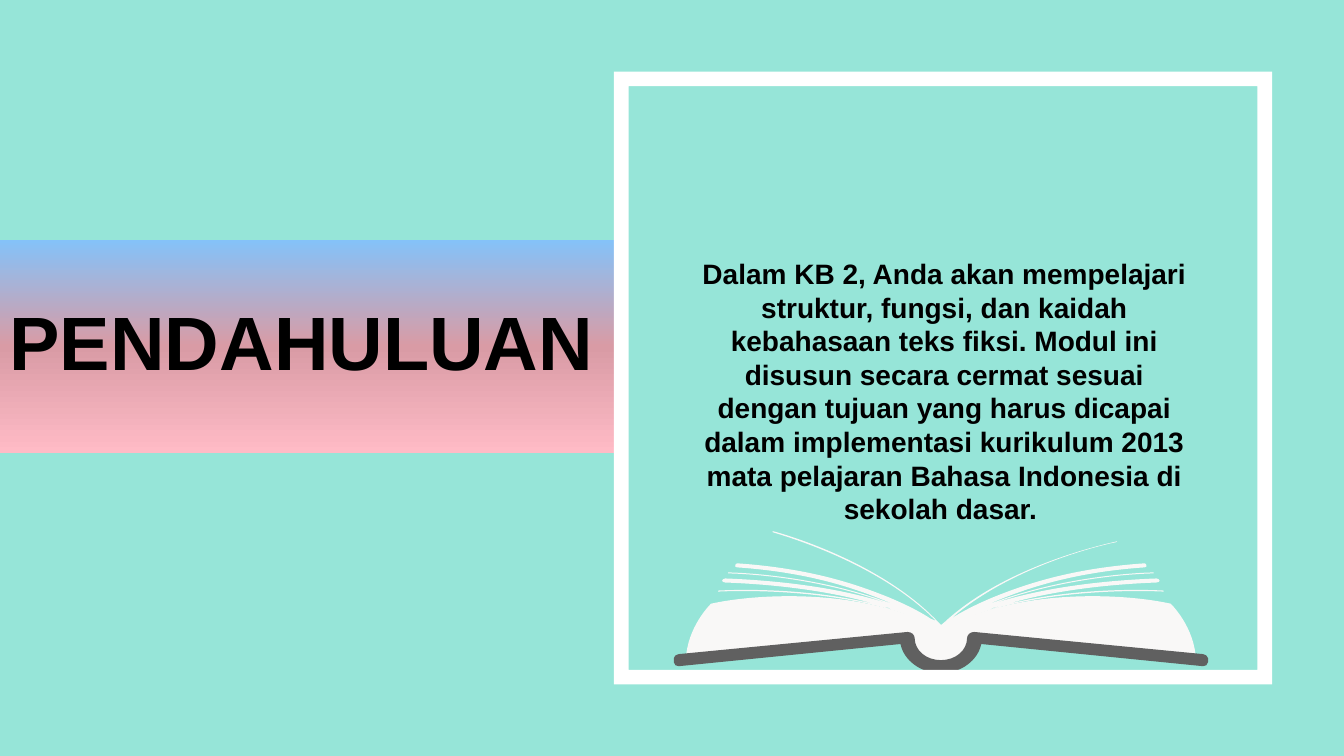
import copy
import itertools
import pptx
import pptx.util
import pptx.dml.color
import pptx.enum.shapes
import pptx.enum.text
import pptx.oxml.ns

Pt = pptx.util.Pt
RGB = pptx.dml.color.RGBColor
MINT = RGB(0x96, 0xE5, 0xD8)
BLUE = RGB(0x85, 0xC2, 0xF8)
ROSE = RGB(0xD9, 0x9B, 0xA5)
PINK = RGB(0xFF, 0xBB, 0xC6)
PAPER = RGB(0xF9, 0xF8, 0xF7)
GREY = RGB(0x60, 0x60, 0x60)
WHITE = RGB(0xFF, 0xFF, 0xFF)
BLACK = RGB(0, 0, 0)

BODY = ("Dalam KB 2, Anda akan mempelajari struktur, fungsi, dan kaidah "
        "kebahasaan teks fiksi. Modul ini disusun secara cermat sesuai dengan "
        "tujuan yang harus dicapai dalam implementasi kurikulum 2013 mata "
        "pelajaran Bahasa Indonesia di sekolah dasar. ")

UNITS = 530
PAGE = [(0, 97), (41.5, 75.5, 88.5, 67, 130, 65),
        (172, 63, 208, 67.5, 228, 72), (228, 72, 252, 95, 253, 128),
        (33, 104), (33, 120, 18, 133, 0, 133)]
COVER = [(0, 141), (20, 141, 37, 128, 40, 112), (260, 134),
         (262, 134, 265, 133, 265, 130), (265, 126),
         (265, 124, 262, 122, 260, 122), (33, 100),
         (29, 100, 26, 103, 26, 106), (26, 118, 15, 128, 0, 128)]
LEAVES = [(221, 59), (220, 59, 129, 53, 49, 77), (51, 77),
          (83, 66, 136, 54, 214, 51), (216, 51, 217, 50, 217, 49),
          (217, 48, 215, 47, 214, 47), (135, 50, 81, 62, 49, 73), (39, 77),
          (121, 43, 210, 42, 211, 42), (211, 41),
          (210, 41, 124, 42, 44, 74), (53, 70),
          (85, 57, 130, 41, 202, 36), (204, 36, 204, 35, 204, 34),
          (204, 33, 203, 32, 202, 32), (129, 37, 83, 53, 51, 66),
          (32, 74, 19, 81, 10, 87)]
SPINE = [(-2, 95), (-2, 97), (1, 100), (1, 100, 12, 92, 37, 82),
         (119, 54, 220, 60, 221, 60)]
RIGHT = [(74, 31, 173, 11, 174, 11), (175, 10), (173, 11, 68, 31, 4, 90)]
LEFT = [(5, 89), (65, 28, 166, 2, 167, 1), (167, 0),
        (166, 0, 60, 28, 1, 92)]


def pairs(part):
    return list(zip(part[::2], part[1::2]))


def flip(path):
    return [tuple(n for x, y in pairs(part) for n in (-x, y))
            for part in path]


def back(path):
    steps = list(itertools.pairwise(path))[::-1]
    return [part[2:4] + part[:2] + last[-2:] if len(part) == 6 else last[-2:]
            for last, part in steps]


def paint(shape, color):
    shape.shadow.inherit = False
    shape.fill.solid()
    shape.fill.fore_color.rgb = color
    shape.line.fill.background()


def bend(shape, spots):
    lines = shape._element.xpath(".//a:lnTo")
    for part, line in zip(spots[1:], lines):
        if len(part) == 1:
            continue
        line.tag = pptx.oxml.ns.qn("a:cubicBezTo")
        for place, (x, y) in enumerate(part[:2]):
            dot = copy.deepcopy(line[-1])
            dot.set("x", str(x - shape.left))
            dot.set("y", str(y - shape.top))
            line.insert(place, dot)


def style(para, size):
    font = para.runs[0].font
    font.name = "Arial"
    font.size = Pt(size)
    font.bold = True
    font.color.rgb = BLACK


def banner(slide, box):
    title = slide.shapes.title
    title.left, title.top, title.width, title.height = map(Pt, box)
    title.fill.gradient()
    title.fill.gradient_angle = 270
    first = title._element.xpath(".//a:gs")[0]
    first.addnext(copy.deepcopy(first))
    stops = title.fill.gradient_stops
    for stop, spot, color in zip(stops, (0, 0.5, 1), (BLUE, ROSE, PINK)):
        stop.position = spot
        stop.color.rgb = color
    frame = title.text_frame
    frame.text = "PENDAHULUAN"
    frame.auto_size = pptx.enum.text.MSO_AUTO_SIZE.NONE
    frame.vertical_anchor = pptx.enum.text.MSO_ANCHOR.MIDDLE
    para = frame.paragraphs[0]
    para.alignment = pptx.enum.text.PP_ALIGN.LEFT
    para.line_spacing = 0.9
    style(para, 54)


def book(slide, box):
    left, top, width = box
    unit = width / UNITS
    group = slide.shapes.add_group_shape()

    def draw(path, color):
        spots = [[(Pt(left + width / 2 + x * unit), Pt(top + y * unit))
                  for x, y in pairs(part)] for part in path]
        ends = [part[-1] for part in spots]
        pen = group.shapes.build_freeform(*ends[0])
        pen.add_line_segments(ends[1:], close=True)
        shape = pen.convert_to_shape()
        bend(shape, spots)
        paint(shape, color)

    for half, color in ((PAGE, PAPER), (COVER, GREY)):
        draw(half + back(flip(half)), color)
    draw(LEAVES + RIGHT + SPINE, PAPER)
    draw(flip(LEAVES + LEFT + SPINE), PAPER)


def panel(slide, box):
    left, top, width, height = box
    note = slide.shapes.add_textbox(
        Pt(left + 52.1), Pt(top + 128.6), Pt(368), Pt(201))
    frame = note.text_frame
    frame.word_wrap = True
    frame.auto_size = pptx.enum.text.MSO_AUTO_SIZE.SHAPE_TO_FIT_TEXT
    frame.text = BODY
    para = frame.paragraphs[0]
    para.alignment = pptx.enum.text.PP_ALIGN.CENTER
    style(para, 20)
    book(slide, (left + 42.8, top + 328.3, 381.6))
    border = slide.shapes.add_shape(
        pptx.enum.shapes.MSO_SHAPE.FRAME, *map(Pt, box))
    border.adjustments[0] = 0.024
    paint(border, WHITE)


def main():
    deck = pptx.Presentation()
    deck.slide_width, deck.slide_height = Pt(960), Pt(540)
    slide = deck.slides.add_slide(deck.slide_layouts[5])
    slide.background.fill.solid()
    slide.background.fill.fore_color.rgb = MINT
    banner(slide, (-0.3, 171.4, 440, 152))
    panel(slide, (438.5, 51.1, 470.2, 437.8))
    deck.save("out.pptx")


if __name__ == "__main__":
    main()
